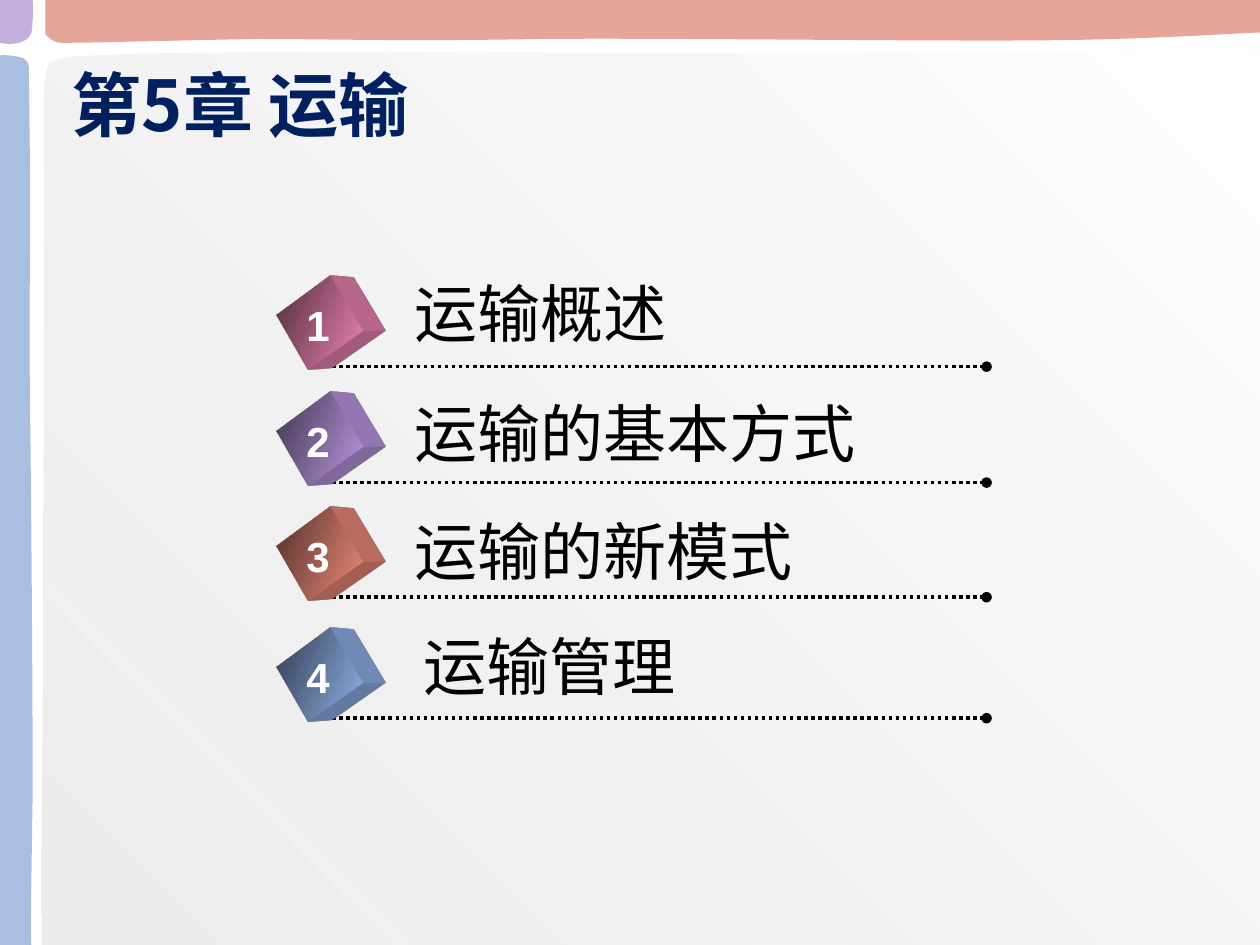
from typing import NamedTuple

from pptx import Presentation
from pptx.dml.color import RGBColor
from pptx.enum.dml import MSO_LINE_DASH_STYLE as Dash
from pptx.enum.shapes import MSO_CONNECTOR as Connector, MSO_SHAPE as Shape
from pptx.enum.text import MSO_ANCHOR as Anchor, PP_ALIGN as Align
from pptx.oxml.ns import qn
from pptx.util import Inches, Pt
from lxml.etree import SubElement

WIDTH, HEIGHT = 10, 7.5
BLACK = RGBColor(0x00, 0x00, 0x00)
WHITE = RGBColor(0xFF, 0xFF, 0xFF)
NAVY = RGBColor(0x00, 0x20, 0x60)
GREY = RGBColor(0xE6, 0xE6, 0xE6)
PINK = RGBColor(0xD8, 0x7A, 0xA5)
PLUM = RGBColor(0x64, 0x38, 0x4C)
PURPLE = RGBColor(0xAC, 0x8C, 0xD0)
DARK_PURPLE = RGBColor(0x50, 0x41, 0x60)
CORAL = RGBColor(0xDA, 0x7F, 0x70)
BROWN = RGBColor(0x65, 0x3B, 0x34)
BLUE = RGBColor(0x85, 0xA3, 0xD5)
SLATE = RGBColor(0x3E, 0x4B, 0x63)

LINE_LEFT, LINE_RIGHT = 2.58, 7.83
CUBE_LEFT, CUBE_WIDTH, CUBE_HEIGHT = 2.27, 0.52, 0.57
CUBE_TURN, CUBE_RISE = 57, 0.63
CUBE_DEPTH, CUBE_YAW = 0.47, 25


class Topic(NamedTuple):
    caption: str
    line_y: float
    left: float
    top: float
    width: float
    light: RGBColor
    dark: RGBColor


TOPICS = [
    Topic("运输概述", 2.91, 3.19, 2.13, 2.22, PINK, PLUM),
    Topic("运输的基本方式", 3.83, 3.19, 3.08, 3.74, PURPLE, DARK_PURPLE),
    Topic("运输的新模式", 4.74, 3.19, 4.02, 3.2, CORAL, BROWN),
    Topic("运输管理", 5.7, 3.26, 4.93, 2.2, BLUE, SLATE),
]

PANEL = [
    (WIDTH, HEIGHT), (WIDTH, 0.42),
    (8.86, 0.38, 8.55, 0.42, 7.6, 0.42), (6.66, 0.42, 5.5, 0.43, 4.33, 0.42),
    (3.16, 0.41, 1.23, 0.41, 0.57, 0.45), (0.36, 0.48, 0.36, 0.49, 0.35, 0.73),
    (0.34, 0.96, 0.35, 1.1, 0.35, 1.82), (0.35, 2.56, 0.34, 4.12, 0.34, 5.06),
    (0.34, 6.01, 0.32, 6.62, 0.33, HEIGHT),
]
TOP_BAND = [
    (WIDTH, 0), (WIDTH, 0.26),
    (10, 0.25, 9.28, 0.31, 8.32, 0.32), (7.36, 0.33, 5.31, 0.3, 4.26, 0.31),
    (3.21, 0.33, 2.65, 0.31, 2.03, 0.31), (1.4, 0.32, 0.77, 0.34, 0.49, 0.34),
    (0.41, 0.34, 0.36, 0.27, 0.36, 0.27), (0.36, 0.27, 0.36, 0.14, 0.36, 0),
]
LEFT_BAND = [
    (0, HEIGHT), (0.25, HEIGHT),
    (0.24, 7.5, 0.25, 6.98, 0.26, 6.28), (0.26, 5.58, 0.25, 4.07, 0.24, 3.3),
    (0.23, 2.54, 0.24, 2.12, 0.24, 1.67), (0.24, 1.21, 0.23, 0.75, 0.23, 0.54),
    (0.23, 0.48, 0.18, 0.46, 0.18, 0.46), (0.07, 0.43, 0, 0.44, 0, 0.44),
]
CORNER = [
    (0, 0), (0.26, 0),
    (0.27, 0.12, 0.25, 0.26, 0.25, 0.26), (0.23, 0.31, 0.19, 0.33, 0.15, 0.34),
    (0.07, 0.36, 0, 0.34, 0, 0.34),
]


def paint(shape, *colors, angle=0, alpha=None):
    shape.shadow.inherit = False
    shape.line.fill.background()
    if len(colors) == 1:
        shape.fill.solid()
        shape.fill.fore_color.rgb = colors[0]
    else:
        shape.fill.gradient()
        shape.fill.gradient_angle = angle
        for stop, color in zip(shape.fill.gradient_stops, colors):
            stop.color.rgb = color
    if alpha:
        first = next(shape._element.spPr.iter(qn("a:srgbClr")))
        SubElement(first, qn("a:alpha")).set("val", str(alpha * 1000))


def bend(shape, outline):
    segments = iter(list(shape._element.spPr.iter(qn("a:lnTo"))))
    for part in outline[1:]:
        segment = next(segments)
        if len(part) == 6:
            curve = segment.makeelement(qn("a:cubicBezTo"))
            segment.addprevious(curve)
            for piece in (segment, next(segments), next(segments)):
                curve.append(piece[0])
                piece.getparent().remove(piece)


def add_outline(page, outline, *colors, **look):
    points = [tuple(map(Inches, part[i:i + 2]))
              for part in outline for i in range(0, len(part), 2)]
    builder = page.shapes.build_freeform(*points[0])
    builder.add_line_segments(points[1:], close=True)
    shape = builder.convert_to_shape()
    bend(shape, outline)
    paint(shape, *colors, **look)


def write(frame, text, *, font, size, color, bold=False, align=Align.LEFT, wrap=False):
    frame.word_wrap = wrap
    para = frame.paragraphs[0]
    para.alignment = align
    span = para.add_run()
    span.text = text
    span.font.name = font
    span.font.size = Pt(size)
    span.font.bold = bold
    span.font.color.rgb = color
    SubElement(span._r.get_or_add_rPr(), qn("a:ea")).set("typeface", font)


def add_label(page, left, top, width, height, text, **style):
    box = page.shapes.add_textbox(*map(Inches, (left, top, width, height)))
    write(box.text_frame, text, **style)


def add_dotted_line(page, y):
    line = page.shapes.add_connector(
        Connector.STRAIGHT, *map(Inches, (LINE_LEFT, y, LINE_RIGHT, y)))
    line.line.color.rgb = BLACK
    line.line.width = Pt(2)
    line.line.dash_style = Dash.ROUND_DOT
    SubElement(line.line._get_or_add_ln(), qn("a:tailEnd")).set("type", "oval")
    SubElement(line._element.spPr, qn("a:effectLst"))


def extrude(shape, color):
    scene = SubElement(shape._element.spPr, qn("a:scene3d"))
    camera = SubElement(scene, qn("a:camera"), prst="legacyPerspectiveFront")
    SubElement(camera, qn("a:rot"), lat="0", lon=str(CUBE_YAW * 60000), rev="0")
    SubElement(scene, qn("a:lightRig"), rig="legacyFlat3", dir="b")
    solid = SubElement(shape._element.spPr, qn("a:sp3d"),
                       extrusionH=str(Inches(CUBE_DEPTH)), prstMaterial="legacyMatte")
    tint = SubElement(solid, qn("a:extrusionClr"))
    SubElement(tint, qn("a:srgbClr"), val=str(color))


def add_cube(page, top, light, dark):
    cube = page.shapes.add_shape(
        Shape.RECTANGLE, *map(Inches, (CUBE_LEFT, top, CUBE_WIDTH, CUBE_HEIGHT)))
    cube.rotation = CUBE_TURN
    paint(cube, light, dark, angle=270)
    extrude(cube, light)


def add_backdrop(page):
    add_outline(page, PANEL, GREY, WHITE, angle=45, alpha=70)
    for outline, color in ((TOP_BAND, CORAL), (LEFT_BAND, BLUE), (CORNER, PURPLE)):
        add_outline(page, outline, color, alpha=70)


def place_title(page, text):
    title = page.shapes.title
    title.left, title.top, title.width, title.height = map(Inches, (0.47, 0.31, 7.36, 1.03))
    title.text_frame.vertical_anchor = Anchor.MIDDLE
    write(title.text_frame, text, font="Noto Sans CJK JP", size=40, color=NAVY,
          bold=True, wrap=True)
    page.shapes._spTree.append(title._element)


def add_topic(page, number, topic):
    top = topic.line_y - CUBE_RISE
    add_dotted_line(page, topic.line_y)
    add_cube(page, top, topic.light, topic.dark)
    add_label(page, 2.33, top + 0.05, 0.39, 0.5, str(number), font="Arial",
              size=24, color=WHITE, bold=True, align=Align.CENTER)
    add_label(page, topic.left, topic.top, topic.width, 0.71, topic.caption,
              font="Noto Sans CJK SC", size=36, color=BLACK)


def main():
    deck = Presentation()
    deck.slide_width, deck.slide_height = Inches(WIDTH), Inches(HEIGHT)
    page = deck.slides.add_slide(deck.slide_layouts[5])
    add_backdrop(page)
    place_title(page, "第5章 运输")
    for number, topic in enumerate(TOPICS, 1):
        add_topic(page, number, topic)
    deck.save("out.pptx")


if __name__ == "__main__":
    main()
